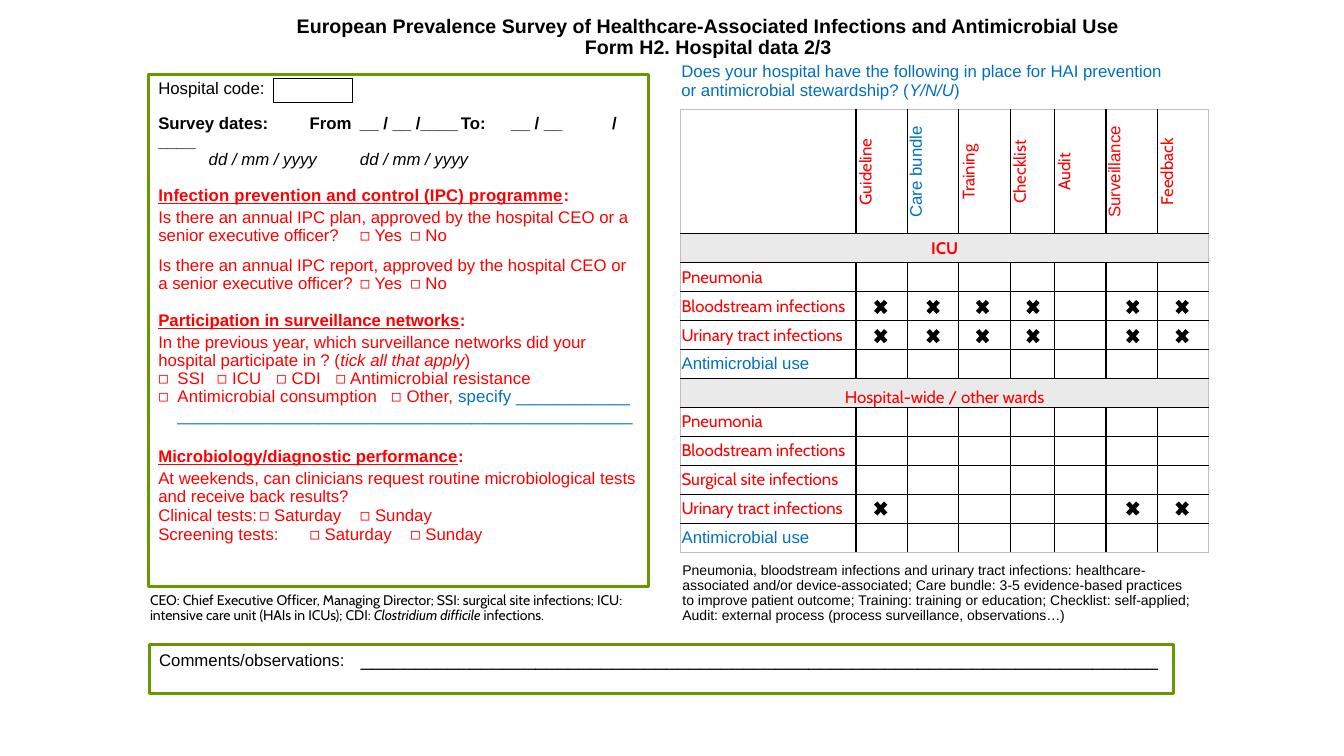
from dataclasses import dataclass

from lxml.etree import SubElement
from pptx import Presentation
from pptx.dml.color import RGBColor
from pptx.enum.shapes import MSO_SHAPE as Shape
from pptx.enum.text import MSO_ANCHOR as Anchor, MSO_AUTO_SIZE as AutoSize, PP_ALIGN as Align
from pptx.oxml.ns import qn
from pptx.util import Inches, Pt


@dataclass(frozen=True)
class Theme:
    black: str = "000000"
    red: str = "FF0000"
    blue: str = "0070C0"
    green: str = "669900"
    band: str = "EAEAEA"
    edge: str = "BFBFBF"
    sans: str = "Arial"
    cabin: str = "Cabin"
    title: int = 14
    body: int = 12
    note: int = 10


theme = Theme()


def add_paragraph(frame, runs, before=0, align=Align.LEFT, tabs=(), bullet=None, **base):
    """Fill the frame's first paragraph, or add one; each run is text or (text, style)."""
    paragraph = frame.paragraphs[0] if not frame.paragraphs[0].runs else frame.add_paragraph()
    paragraph.alignment = align
    paragraph.line_spacing = 0.9
    paragraph.space_before = Pt(before)
    properties = paragraph._p.get_or_add_pPr()
    indent = Inches(0.19) if bullet else 0
    properties.set("marL", str(indent))
    properties.set("indent", str(-indent))
    if bullet:
        SubElement(properties, qn("a:buChar"), char=bullet)
    else:
        SubElement(properties, qn("a:buNone"))
    if tabs:
        tab_list = SubElement(properties, qn("a:tabLst"))
        for tab in tabs:
            SubElement(tab_list, qn("a:tab"), pos=str(Inches(tab)), algn="l")
    for item in runs:
        text, changes = (item, {}) if isinstance(item, str) else item
        style = {"size": theme.body, "name": theme.sans, "color": theme.black, **base, **changes}
        run = paragraph.add_run()
        run.text = text
        run.font.size = Pt(style["size"])
        run.font.name = style["name"]
        run.font.color.rgb = RGBColor.from_string(style["color"])
        run.font.bold = style.get("bold", False)
        run.font.italic = style.get("italic", False)
        run.font.underline = style.get("underline", False)
        if style.get("spaced"):
            run._r.get_or_add_rPr().set("spc", "10")


def prepare_frame(shape, left, top, width, height):
    """Place a text shape and return its frame, wrapped and anchored at the top."""
    shape.left, shape.top = Inches(left), Inches(top)
    shape.width, shape.height = Inches(width), Inches(height)
    frame = shape.text_frame
    frame.word_wrap = True
    frame.auto_size = AutoSize.NONE
    frame.vertical_anchor = Anchor.TOP
    return frame


presentation = Presentation()
presentation.slide_width, presentation.slide_height = Inches(13.33), Inches(7.5)
slide = presentation.slides.add_slide(presentation.slide_layouts[1])
shapes = slide.shapes

# Title
title = prepare_frame(shapes.title, 2.26, 0.11, 9.53, 0.57)
for line in ("European Prevalence Survey of Healthcare-Associated Infections and Antimicrobial Use",
             "Form H2. Hospital data 2/3"):
    add_paragraph(title, [line], align=Align.CENTER, size=theme.title, bold=True)

# Hospital questionnaire
panel = slide.placeholders[1]
form = prepare_frame(panel, 1.47, 0.74, 4.96, 5.08)
panel.line.color.rgb = RGBColor.from_string(theme.green)
panel.line.width = Pt(2.25)

heading = {"bold": True, "underline": True}
colon = (":", {"bold": True})
answer_tabs = (2.14, 3.09)
day_tabs = (1.29, 2.35)
red = {"color": theme.red}
italic = {"italic": True}

add_paragraph(form, ["Hospital code:"])
add_paragraph(form, ["Survey dates:\tFrom\t__ / __ /____\tTo:\t__ / __\t/\t____"], 12.4,
              tabs=(1.18, 1.69, 2.75, 3.14, 3.75, 3.88), bold=True)
add_paragraph(form, ["\tdd / mm / yyyy\tdd / mm / yyyy"], tabs=(1.66, 3.06), italic=True)
add_paragraph(form, [("Infection prevention and control (IPC) programme", {**heading, "spaced": True}), colon],
              12.4, **red)
add_paragraph(form, ["Is there an annual IPC plan, approved by the hospital CEO or a "
                     "senior executive officer?\t◻ Yes\t◻ No"], 3, tabs=answer_tabs, **red)
add_paragraph(form, ["Is there an annual IPC report, approved by the hospital CEO or "
                     "a senior executive officer?\t◻ Yes\t◻ No"], 8.3, tabs=answer_tabs, **red)
add_paragraph(form, [("Participation in surveillance networks", heading), colon], 13, **red)
add_paragraph(form, ["In the previous year, which surveillance networks did your hospital participate in ? (",
                     ("tick all that apply", italic), ")"], 3, **red)
add_paragraph(form, ["SSI\t◻ ICU\t◻ CDI\t◻ Antimicrobial resistance"],
              tabs=(0.58, 1.17, 1.76), bullet="◻", spaced=True, **red)
add_paragraph(form, ["Antimicrobial consumption\t◻ Other, ",
                     ("specify " + "_" * 12 + " " + "_" * 48, {"color": theme.blue})],
              tabs=(2.31,), bullet="◻", spaced=True, **red)
add_paragraph(form, [("Microbiology/diagnostic performance", heading), colon], 16.5, **red)
add_paragraph(form, ["At weekends, can clinicians request routine microbiological tests "
                     "and receive back results?"], 3, **red)
for tests in ("Clinical", "Screening"):
    add_paragraph(form, [f"{tests} tests:\t◻ Saturday\t◻ Sunday"], 0.6, tabs=day_tabs, **red)

# Hospital code field and comments box
for left, top, width, height, color, weight in (
        (2.71, 0.78, 0.79, 0.24, theme.black, 0.75),
        (1.48, 6.39, 10.16, 0.49, theme.green, 2.25)):
    box = shapes.add_shape(Shape.RECTANGLE, Inches(left), Inches(top), Inches(width), Inches(height))
    box.shadow.inherit = False
    box.fill.background()
    box.line.color.rgb = RGBColor.from_string(color)
    box.line.width = Pt(weight)
comments = prepare_frame(box, left, top, width, height)
add_paragraph(comments, ["Comments/observations:\t", ("_" * 73, {"size": theme.title})], tabs=(1.98,))

# Question above the table and the notes
for place, runs, style in (
        ((6.66, 0.58, 5.12, 0.5),
         ["Does your hospital have the following in place for HAI prevention or antimicrobial stewardship? (",
          ("Y/N/U", italic), ")"],
         {"color": theme.blue}),
        ((6.67, 5.54, 5.28, 0.77),
         ["Pneumonia, bloodstream infections and urinary tract infections: healthcare-associated and/or "
          "device-associated; Care bundle: 3-5 evidence-based practices to improve patient outcome; "
          "Training: training or education; Checklist: self-applied; "
          "Audit: external process (process surveillance, observations…)"],
         {"size": theme.note}),
        ((1.39, 5.84, 5.04, 0.44),
         ["CEO: Chief Executive Officer, Managing Director; SSI: surgical site infections; "
          "ICU: intensive care unit (HAIs in ICUs); CDI: ",
          ("Clostridium difficile ", italic), "infections."],
         {"size": theme.note, "name": theme.cabin})):
    text_box = shapes.add_textbox(0, 0, 0, 0)
    add_paragraph(prepare_frame(text_box, *place), runs, **style)

# Prevention table
measures = ["", "Guideline", "Care bundle", "Training", "Checklist", "Audit", "Surveillance", "Feedback"]
bands = ("ICU", "Hospital-wide / other wards")
row_labels = ["", bands[0], "Pneumonia", "Bloodstream infections", "Urinary tract infections",
              "Antimicrobial use", bands[1], "Pneumonia", "Bloodstream infections",
              "Surgical site infections", "Urinary tract infections", "Antimicrobial use"]
blue_labels = ("Care bundle", "Antimicrobial use")
last_row, last_column = len(row_labels) - 1, len(measures) - 1
header_height, table_height = 1.23, 4.39

table = shapes.add_table(len(row_labels), len(measures), Inches(6.75), Inches(1.09),
                         Inches(5.23), Inches(table_height)).table
table.first_row = table.horz_banding = False
for column, width in zip(table.columns, (1.74, 0.51, 0.51, 0.51, 0.44, 0.51, 0.51, 0.51)):
    column.width = Inches(width)
for index, row in enumerate(table.rows):
    row.height = Inches((table_height - header_height) / last_row if index else header_height)

for row, label in enumerate(row_labels):
    is_band = label in bands
    for column, measure in enumerate(measures):
        cell = table.cell(row, column)
        cell.margin_left = cell.margin_top = cell.margin_right = Inches(0.01)
        cell.margin_bottom = 0
        cell.vertical_anchor = Anchor.BOTTOM if label == bands[1] else Anchor.MIDDLE
        properties = cell._tc.get_or_add_tcPr()
        for side, is_outer in (("L", is_band or column == 0), ("R", is_band or column == last_column),
                               ("T", row == 0), ("B", row == last_row)):
            border = SubElement(properties, qn(f"a:ln{side}"), w=str(Pt(1)))
            border_fill = SubElement(border, qn("a:solidFill"))
            SubElement(border_fill, qn("a:srgbClr"), val=theme.edge if is_outer else theme.black)
        if is_band:
            cell.fill.solid()
            cell.fill.fore_color.rgb = RGBColor.from_string(theme.band)
        else:
            cell.fill.background()
        text = measure if row == 0 else label if column == 0 else ""
        if text:
            is_blue = text in blue_labels
            add_paragraph(cell.text_frame, [text], align=Align.CENTER if is_band or row == 0 else Align.LEFT,
                          color=theme.blue if is_blue else theme.red, bold=text == bands[0],
                          name=theme.sans if is_blue or text == "Surveillance" else theme.cabin)
            if row == 0:
                properties.set("vert", "vert270")
        else:
            SubElement(cell.text_frame.paragraphs[0]._p, qn("a:endParaRPr"), sz=str(theme.body * 100))
    if is_band:
        table.cell(row, 0).merge(table.cell(row, last_column))

# Crosses over the cells that do not apply
cross_lefts = {"Guideline": 8.64, "Care bundle": 9.16, "Training": 9.65, "Checklist": 10.15,
               "Surveillance": 11.14, "Feedback": 11.63}
for top, crossed in ((2.94, list(cross_lefts)), (3.23, list(cross_lefts)),
                     (4.94, ["Guideline", "Surveillance", "Feedback"])):
    for measure in crossed:
        cross = shapes.add_shape(Shape.MATH_MULTIPLY, Inches(cross_lefts[measure]), Inches(top),
                                 Inches(0.19), Inches(0.21))
        cross.shadow.inherit = False
        cross.fill.solid()
        cross.fill.fore_color.rgb = RGBColor.from_string(theme.black)
        cross.line.fill.background()

presentation.save("out.pptx")
